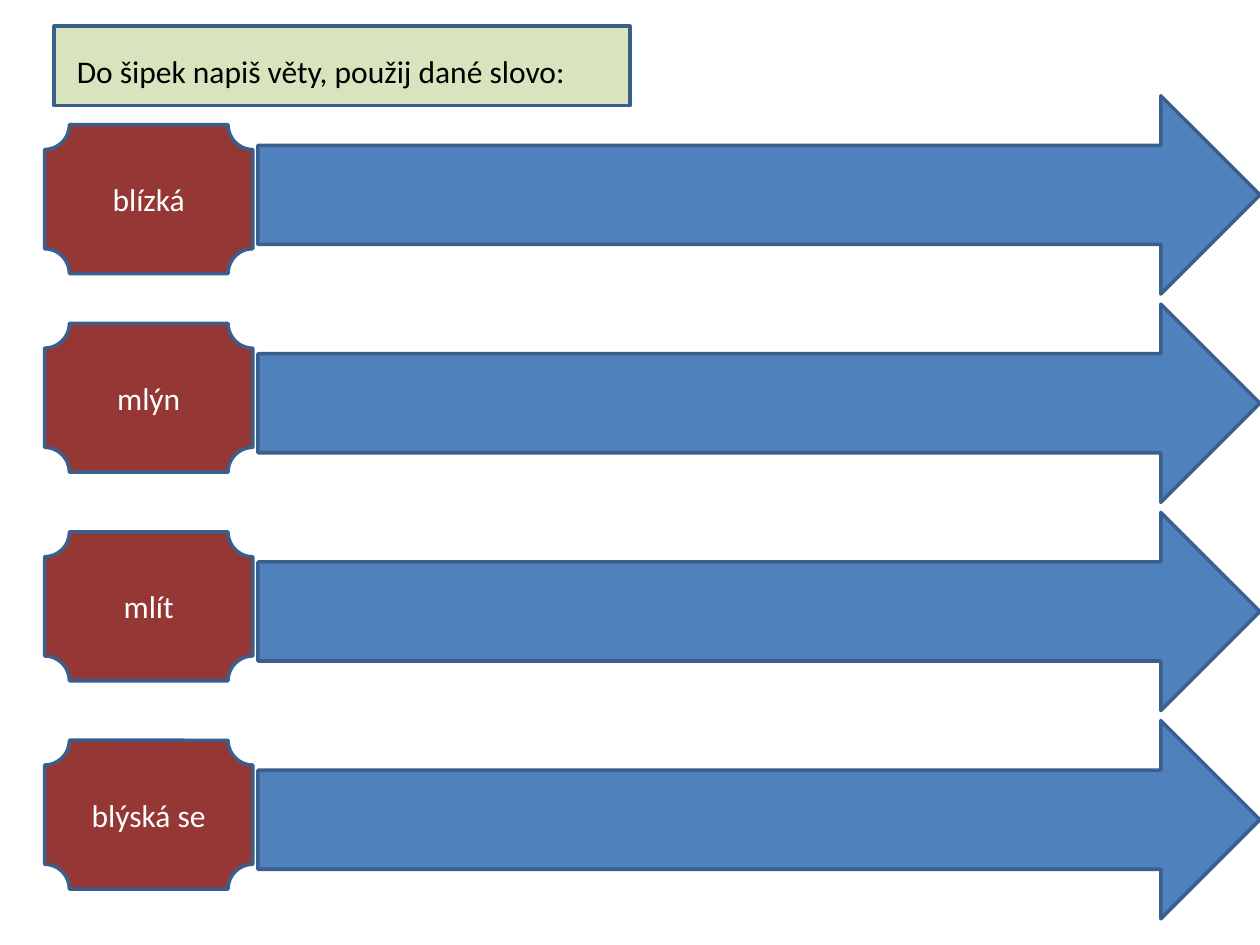
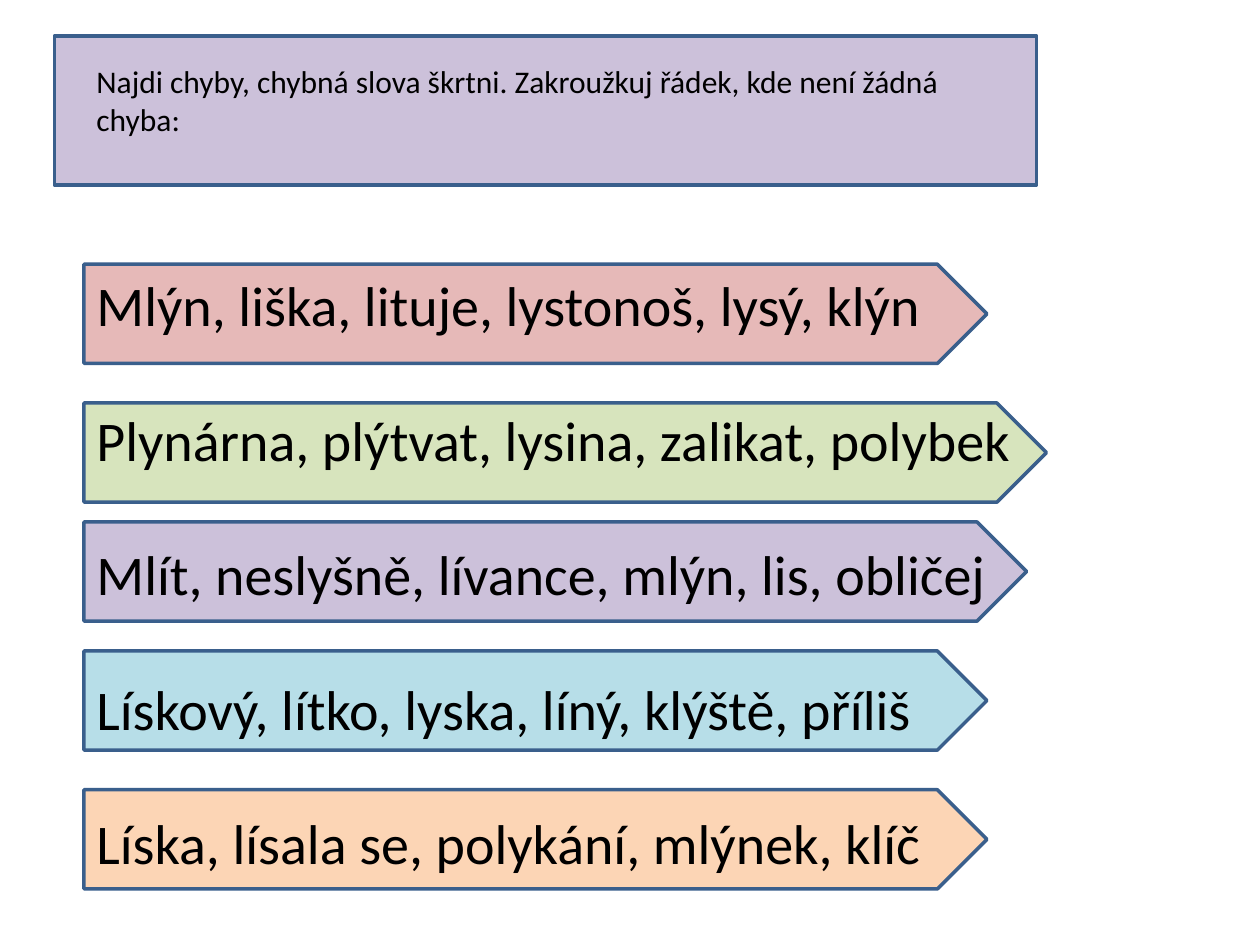
from dataclasses import dataclass

from pptx import Presentation
from pptx.dml.color import RGBColor
from pptx.enum.shapes import MSO_SHAPE
from pptx.enum.text import MSO_ANCHOR, MSO_AUTO_SIZE, PP_ALIGN
from pptx.shapes.autoshape import Shape
from pptx.slide import Slide
from pptx.text.text import TextFrame
from pptx.util import Pt

BLACK = RGBColor(0x00, 0x00, 0x00)
WHITE = RGBColor(0xFF, 0xFF, 0xFF)
EDGE = RGBColor(0x3A, 0x5F, 0x8C)
BLUE = RGBColor(0x4F, 0x81, 0xBD)
RED = RGBColor(0x95, 0x37, 0x35)
PINK = RGBColor(0xE6, 0xB9, 0xB8)
GREEN = RGBColor(0xD7, 0xE4, 0xBD)
LILAC = RGBColor(0xCC, 0xC1, 0xDA)
AQUA = RGBColor(0xB7, 0xDE, 0xE8)
PEACH = RGBColor(0xFC, 0xD5, 0xB5)

FONT = "Calibri"
SMALL, LARGE = 18, 32
ARROW_TOP, ARROW_STEP = 54.75, 119
LINE_GAP = 38.5


@dataclass(frozen=True)
class Box:
    left: float
    top: float
    width: float
    height: float

    def lengths(self) -> tuple[Pt, Pt, Pt, Pt]:
        return Pt(self.left), Pt(self.top), Pt(self.width), Pt(self.height)


@dataclass(frozen=True)
class Plaque:
    word: str
    top: float


@dataclass(frozen=True)
class Band:
    text: str
    top: float
    width: float
    fill: RGBColor


PLAQUES = (
    Plaque("blízká", 71.3),
    Plaque("mlýn", 184.8),
    Plaque("mlít", 304),
    Plaque("blýská se", 423),
)

BANDS = (
    Band("Mlýn, liška, lituje, lystonoš, lysý, klýn", 151, 516, PINK),
    Band("Plynárna, plýtvat, lysina, zalikat, polybek", 230.3, 550, GREEN),
    Band("Mlít, neslyšně, lívance, mlýn, lis, obličej", 298.3, 538.7, LILAC),
    Band("Lískový, lítko, lyska, líný, klýště, příliš", 372, 516, AQUA),
    Band("Líska, lísala se, polykání, mlýnek, klíč", 451.3, 516, PEACH),
)


def add_block(slide: Slide, kind: MSO_SHAPE, box: Box, fill: RGBColor) -> Shape:
    shape = slide.shapes.add_shape(kind, *box.lengths())
    shape.shadow.inherit = False
    shape.fill.solid()
    shape.fill.fore_color.rgb = fill
    shape.line.color.rgb = EDGE
    shape.line.width = Pt(2)
    return shape


def write(frame: TextFrame, lines: list[str], size: float, color: RGBColor,
          align: PP_ALIGN = PP_ALIGN.LEFT, gap: float = 0) -> None:
    """Fill the frame with one paragraph per line, the gap between them."""
    frame.word_wrap = True
    for index, line in enumerate(lines):
        para = frame.add_paragraph() if index else frame.paragraphs[0]
        para.alignment = align
        para.space_before = Pt(gap if index else 0)
        run = para.add_run()
        run.text = line
        style = {"name": FONT, "size": Pt(size)}
        for key, value in style.items():
            setattr(run.font, key, value)
        run.font.color.rgb = color


def add_text(slide: Slide, box: Box, lines: list[str], size: float,
             gap: float = 0) -> None:
    frame = slide.shapes.add_textbox(*box.lengths()).text_frame
    write(frame, lines, size, BLACK, gap=gap)
    frame.auto_size = MSO_AUTO_SIZE.SHAPE_TO_FIT_TEXT


def add_task(slide: Slide, panel: Box, fill: RGBColor, area: Box, text: str) -> None:
    add_block(slide, MSO_SHAPE.RECTANGLE, panel, fill)
    add_text(slide, area, [text], SMALL)


def build_arrows(slide: Slide) -> None:
    add_task(slide, Box(31, 15, 329, 45.4), GREEN, Box(36.8, 26, 420, 29),
             "Do šipek napiš věty, použij dané slovo:")
    for row in range(len(PLAQUES)):
        box = Box(147.4, ARROW_TOP + row * ARROW_STEP, 572.6, 113.3)
        add_block(slide, MSO_SHAPE.RIGHT_ARROW, box, BLUE)
    for plaque in PLAQUES:
        shape = add_block(slide, MSO_SHAPE.PLAQUE,
                          Box(25.5, plaque.top, 119, 85), RED)
        write(shape.text_frame, [plaque.word], SMALL, WHITE, PP_ALIGN.CENTER)
        shape.text_frame.vertical_anchor = MSO_ANCHOR.MIDDLE


def build_bands(slide: Slide) -> None:
    for band in BANDS:
        add_block(slide, MSO_SHAPE.PENTAGON,
                  Box(48, band.top, band.width, 56.7), band.fill)
    add_task(slide, Box(31, 20.6, 561.4, 85), LILAC, Box(48, 32, 505, 51),
             "Najdi chyby, chybná slova škrtni. "
             "Zakroužkuj řádek, kde není žádná chyba:")
    add_text(slide, Box(48, 151, 561.4, 356.5), [band.text for band in BANDS],
             LARGE, LINE_GAP)


def main() -> None:
    deck = Presentation()
    deck.slide_width, deck.slide_height = Pt(720), Pt(540)
    blank = deck.slide_layouts[6]
    for build in (build_arrows, build_bands):
        build(deck.slides.add_slide(blank))
    deck.save("out.pptx")


if __name__ == "__main__":
    main()
